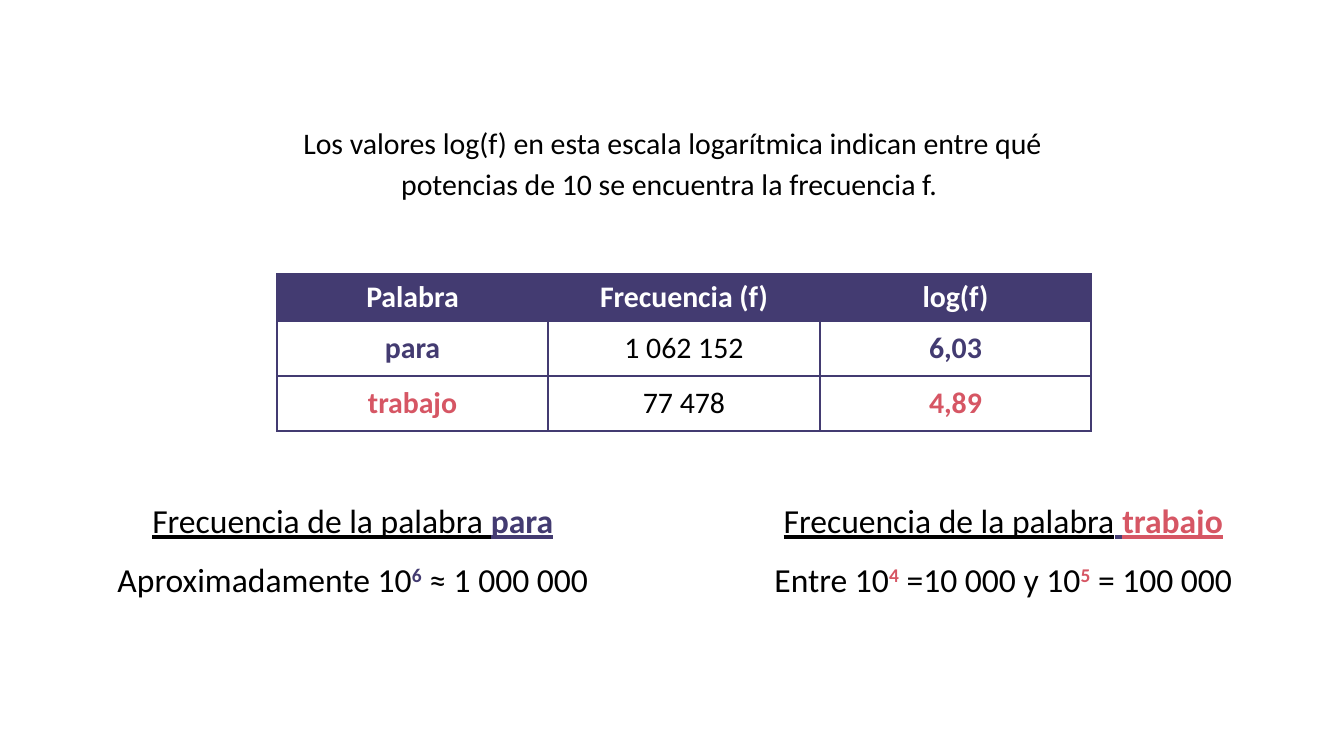
from lxml.etree import SubElement
from pptx import Presentation
from pptx.dml.color import RGBColor
from pptx.enum.text import MSO_ANCHOR as Anchor, MSO_AUTO_SIZE as AutoSize, PP_ALIGN as Align
from pptx.oxml.ns import qn
from pptx.util import Inches, Pt

PURPLE = RGBColor(0x43, 0x3B, 0x71)
RED = RGBColor(0xD6, 0x56, 0x64)
BLACK = RGBColor(0, 0, 0)
WHITE = RGBColor(0xFF, 0xFF, 0xFF)


def add_text(paragraph, text, size=16, color=BLACK, bold=False, underline=False, raised=False):
    """Add a centred run; raised makes it a superscript."""
    paragraph.alignment = Align.CENTER
    run = paragraph.add_run()
    run.text = text
    font = run.font
    font.name, font.size, font.bold, font.underline = "Calibri", Pt(size), bold, underline
    font.color.rgb = color
    if raised:
        run._r.get_or_add_rPr().set("baseline", "30000")


def add_box(left, top, width, height):
    """Add a wrapping text box and return its text frame."""
    box = slide.shapes.add_textbox(Inches(left), Inches(top), Inches(width), Inches(height))
    frame = box.text_frame
    frame.word_wrap = True
    frame.auto_size = AutoSize.SHAPE_TO_FIT_TEXT
    frame.margin_left = frame.margin_right = Inches(0.1)
    frame.margin_top = frame.margin_bottom = Inches(0.1)
    return frame


presentation = Presentation()
presentation.slide_width = Inches(10)
presentation.slide_height = presentation.slide_width * 9 // 16
slide = presentation.slides.add_slide(presentation.slide_layouts[6])

# Introduction
intro = add_box(2.03, 0.79, 5.95, 0.78).paragraphs[0]
intro.line_spacing = 1.15
add_text(intro, "Los valores log(f) en esta escala logarítmica indican entre qué "
                "potencias de 10 se encuentra la frecuencia f. ")

# Frequency table
ROWS = [
    (("Palabra", "Frecuencia (f)", "log(f)"), 0.34, WHITE),
    (("para", "1 062 152", "6,03"), 0.41, PURPLE),
    (("trabajo", "77 478", "4,89"), 0.41, RED),
]
COLUMN_WIDTH = 2.02
table_height = sum(height for _, height, _ in ROWS)
table = slide.shapes.add_table(len(ROWS), 3, Inches(2.06), Inches(2.04),
                               Inches(3 * COLUMN_WIDTH), Inches(table_height)).table
for column in table.columns:
    column.width = Inches(COLUMN_WIDTH)

for row_index, (texts, height, accent) in enumerate(ROWS):
    table.rows[row_index].height = Inches(height)
    for column_index, text in enumerate(texts):
        cell = table.cell(row_index, column_index)
        cell.vertical_anchor = Anchor.MIDDLE
        cell.margin_left = cell.margin_right = Inches(0.08)
        cell.margin_top = cell.margin_bottom = Inches(0.04)
        properties = cell._tc.get_or_add_tcPr()
        for side in ("a:lnL", "a:lnR", "a:lnT", "a:lnB"):
            border = SubElement(properties, qn(side), w=str(Pt(1)))
            fill = SubElement(border, qn("a:solidFill"))
            SubElement(fill, qn("a:srgbClr"), val=str(PURPLE))
        is_header = row_index == 0
        if is_header:
            cell.fill.solid()
            cell.fill.fore_color.rgb = PURPLE
        else:
            cell.fill.background()
        is_accented = is_header or column_index != 1
        add_text(cell.text_frame.paragraphs[0], text,
                 color=accent if is_accented else BLACK, bold=is_accented)

# Reading of each frequency: plain text and exponents alternate
READINGS = [
    (0.65, 3.95, "para", PURPLE, BLACK, ("Aproximadamente 10", "6", " ≈ 1 000 000")),
    (5.54, 3.85, "trabajo", RED, PURPLE, ("Entre 10", "4", " =10 000 y 10", "5", " = 100 000")),
]
for left, width, word, accent, space_color, parts in READINGS:
    frame = add_box(left, 3.62, width, 0.95)
    heading = frame.paragraphs[0]
    add_text(heading, "Frecuencia de la palabra", size=18, underline=True)
    add_text(heading, " ", size=18, color=space_color, underline=True)
    add_text(heading, word, size=18, color=accent, bold=True, underline=True)
    reading = frame.add_paragraph()
    reading.space_before = Pt(10)
    for index, part in enumerate(parts):
        is_exponent = index % 2 == 1
        add_text(reading, part, size=18, color=accent if is_exponent else BLACK,
                 bold=is_exponent, raised=is_exponent)

presentation.save("out.pptx")
